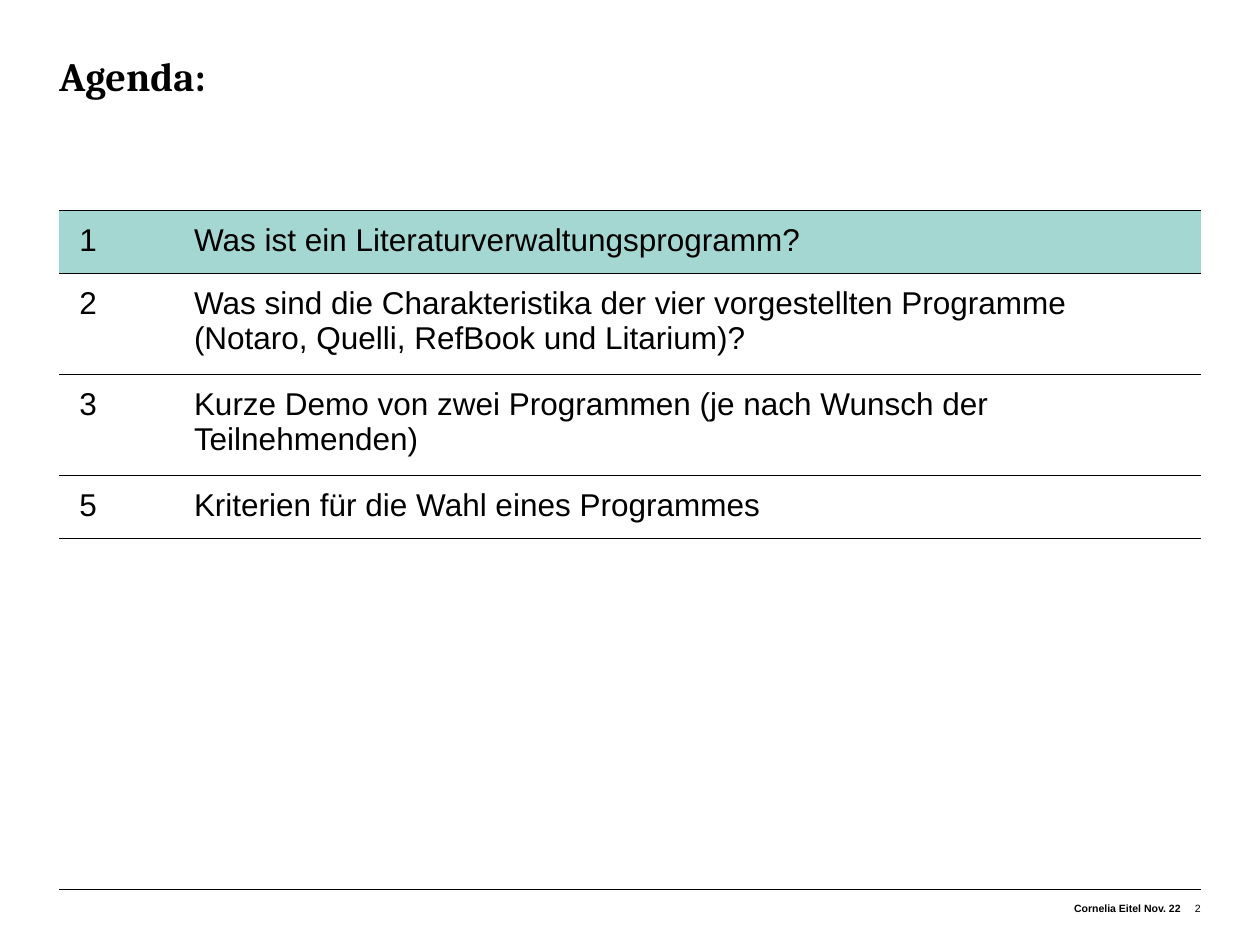
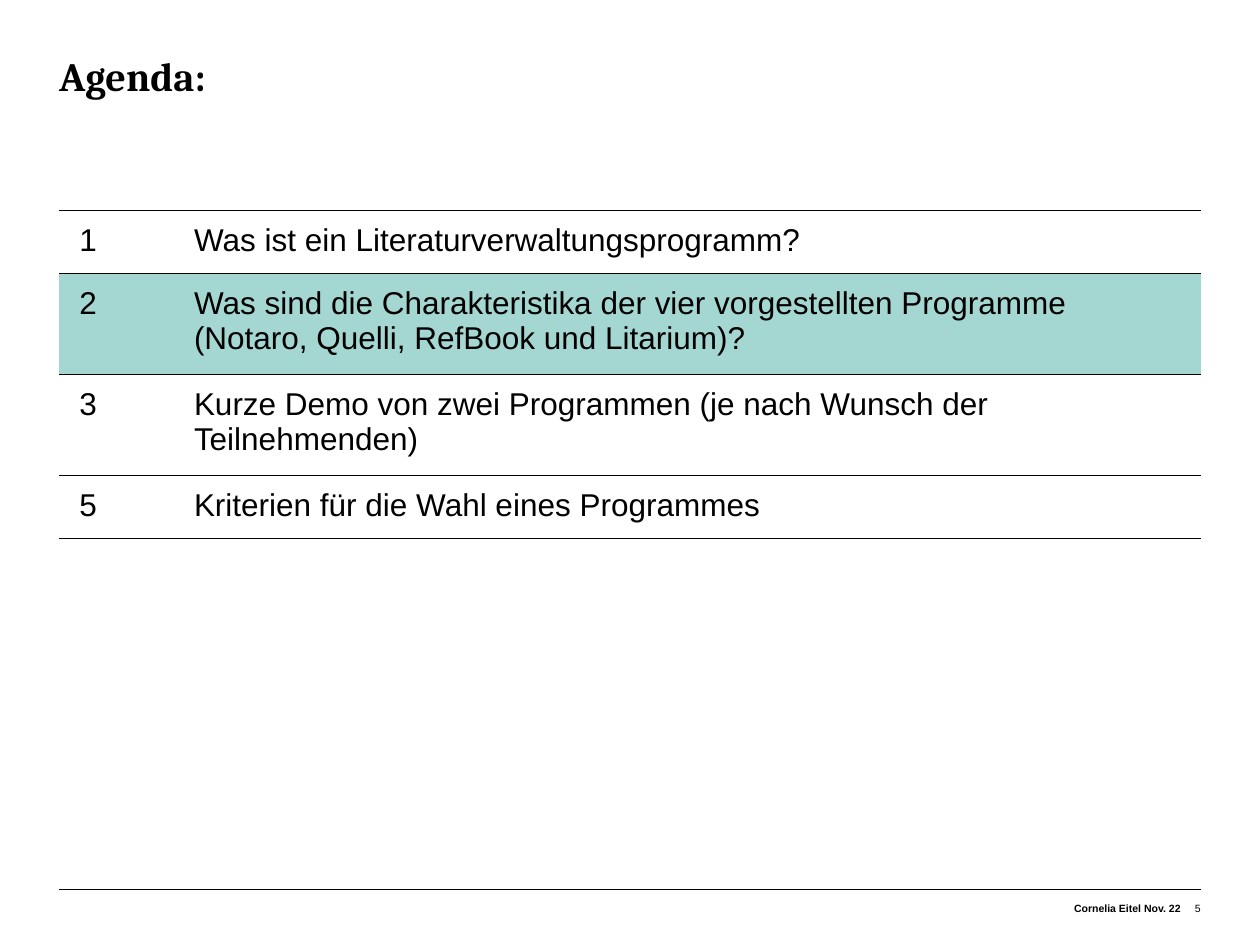
from dataclasses import dataclass

from lxml.etree import SubElement
from pptx import Presentation
from pptx.dml.color import RGBColor
from pptx.enum.shapes import MSO_CONNECTOR as Connector
from pptx.enum.text import MSO_ANCHOR as Anchor, PP_ALIGN as Align
from pptx.oxml.ns import qn
from pptx.slide import Slide
from pptx.table import _Cell as Cell
from pptx.text.text import _Paragraph as Paragraph
from pptx.util import Inches, Pt

BLACK = RGBColor(0x00, 0x00, 0x00)
WHITE = RGBColor(0xFF, 0xFF, 0xFF)
MINT = RGBColor(0xA5, 0xD7, 0xD2)

LEFT, WIDTH = 0.47, 9.06
NUMBER_WIDTH = 0.91
ROW_HEIGHT = 0.41
CELL_FORMAT = {
    "margin_left": Inches(0.16),
    "margin_right": Inches(0.16),
    "margin_top": Inches(0.1),
    "margin_bottom": Inches(0.1),
    "vertical_anchor": Anchor.TOP,
}


@dataclass(frozen=True)
class TextStyle:
    size: float
    font: str = "Arial"
    bold: bool = False
    align: Align = Align.LEFT
    line_spacing: float | None = None


@dataclass(frozen=True)
class Box:
    left: float
    top: float
    width: float
    height: float
    inset_top: float = 0


@dataclass(frozen=True)
class Topic:
    number: str
    question: str


@dataclass(frozen=True)
class AgendaPage:
    page_number: str
    current_topic: str


TITLE_STYLE = TextStyle(23, font="Cambria", bold=True, line_spacing=25)
TOPIC_STYLE = TextStyle(18)
AUTHOR_STYLE = TextStyle(6, bold=True, align=Align.RIGHT)
PAGE_STYLE = TextStyle(6, align=Align.RIGHT)

TITLE_BOX = Box(LEFT, 0.44, WIDTH, 0.83)
AUTHOR_BOX = Box(7.28, 7.14, 2.09, 0.2, inset_top=0.02)
PAGE_BOX = Box(9.37, 7.14, 0.16, 0.2, inset_top=0.02)

TOPICS = [
    Topic("1", "Was ist ein Literaturverwaltungsprogramm?"),
    Topic("2", "Was sind die Charakteristika der vier vorgestellten Programme "
               "(Notaro, Quelli, RefBook und Litarium)?"),
    Topic("3", "Kurze Demo von zwei Programmen (je nach Wunsch der Teilnehmenden)"),
    Topic("5", "Kriterien für die Wahl eines Programmes"),
]
PAGES = [AgendaPage("2", "1"), AgendaPage("5", "2")]


def write(paragraph: Paragraph, text: str, style: TextStyle) -> None:
    paragraph.alignment = style.align
    if style.line_spacing:
        paragraph.line_spacing = Pt(style.line_spacing)
    run = paragraph.add_run()
    run.text = text
    run.font.color.rgb = BLACK
    for attribute, value in {
        "name": style.font, "size": Pt(style.size), "bold": style.bold,
    }.items():
        setattr(run.font, attribute, value)


def add_text(slide: Slide, box: Box, text: str, style: TextStyle) -> None:
    frame = slide.shapes.add_textbox(
        Inches(box.left), Inches(box.top), Inches(box.width), Inches(box.height)
    ).text_frame
    for attribute, value in {
        "word_wrap": True, "vertical_anchor": Anchor.TOP,
        "margin_left": 0, "margin_right": 0,
        "margin_top": Inches(box.inset_top), "margin_bottom": 0,
    }.items():
        setattr(frame, attribute, value)
    write(frame.paragraphs[0], text, style)


def add_footer(slide: Slide, page_number: str) -> None:
    rule = slide.shapes.add_connector(
        Connector.STRAIGHT,
        Inches(LEFT), Inches(7.06), Inches(LEFT + WIDTH), Inches(7.06),
    )
    rule.line.color.rgb = BLACK
    rule.line.width = Pt(0.25)
    SubElement(rule._element.spPr, qn("a:effectLst"))
    add_text(slide, AUTHOR_BOX, "Cornelia Eitel Nov. 22", AUTHOR_STYLE)
    add_text(slide, PAGE_BOX, page_number, PAGE_STYLE)


def set_borders(cell: Cell) -> None:
    properties = cell._tc.get_or_add_tcPr()
    for side in ("a:lnL", "a:lnR"):
        SubElement(SubElement(properties, qn(side), w="0"), qn("a:noFill"))
    for side in ("a:lnT", "a:lnB"):
        border = SubElement(properties, qn(side), w=str(Pt(0.5)))
        fill = SubElement(border, qn("a:solidFill"))
        SubElement(fill, qn("a:srgbClr"), val=str(BLACK))


def add_agenda(slide: Slide, current_topic: str) -> None:
    agenda = slide.shapes.add_table(
        len(TOPICS), 2, Inches(LEFT), Inches(1.67),
        Inches(WIDTH), Inches(ROW_HEIGHT * len(TOPICS)),
    ).table
    agenda.first_row = agenda.horz_banding = False
    for column, width in zip(agenda.columns, (NUMBER_WIDTH, WIDTH - NUMBER_WIDTH)):
        column.width = Inches(width)
    for row, topic in zip(agenda.rows, TOPICS):
        for cell, text in zip(row.cells, (topic.number, topic.question)):
            for attribute, value in CELL_FORMAT.items():
                setattr(cell, attribute, value)
            set_borders(cell)
            cell.fill.solid()
            cell.fill.fore_color.rgb = MINT if topic.number == current_topic else WHITE
            write(cell.text_frame.paragraphs[0], text, TOPIC_STYLE)


def main() -> None:
    presentation = Presentation()
    presentation.slide_width = Inches(10)
    presentation.slide_height = Inches(7.5)
    for page in PAGES:
        slide = presentation.slides.add_slide(presentation.slide_layouts[6])
        add_footer(slide, page.page_number)
        add_text(slide, TITLE_BOX, "Agenda:", TITLE_STYLE)
        add_agenda(slide, page.current_topic)
    presentation.save("out.pptx")


if __name__ == "__main__":
    main()
